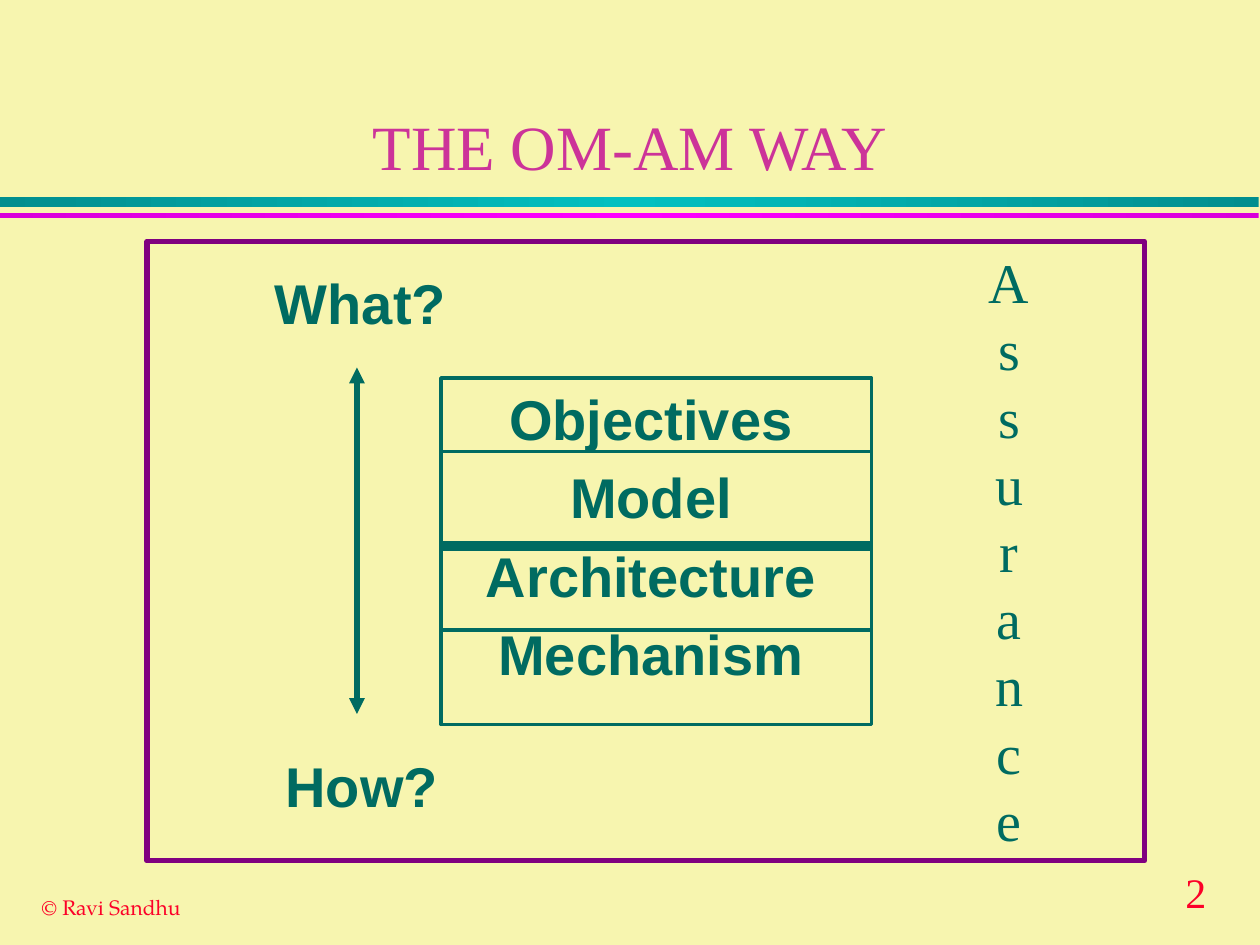
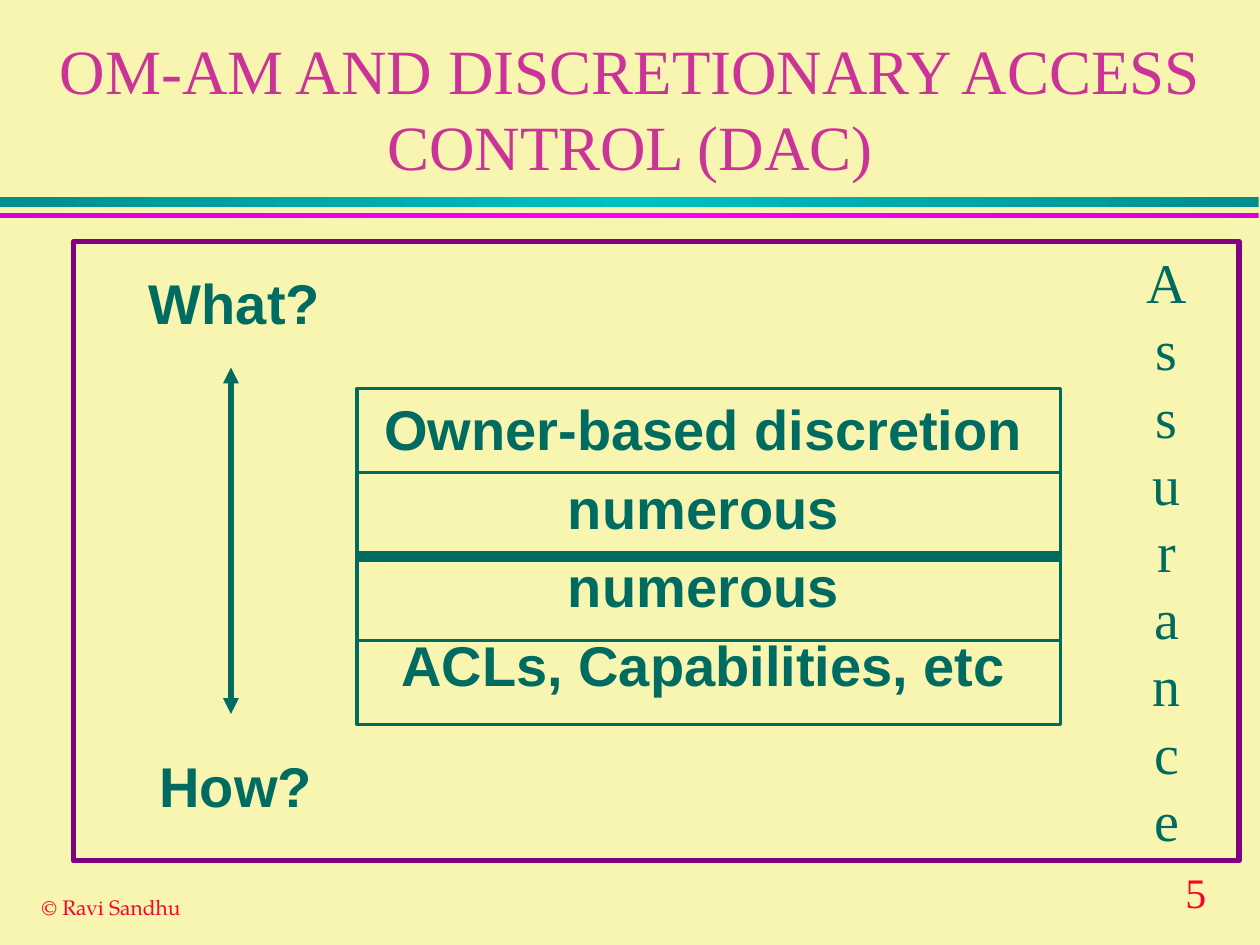
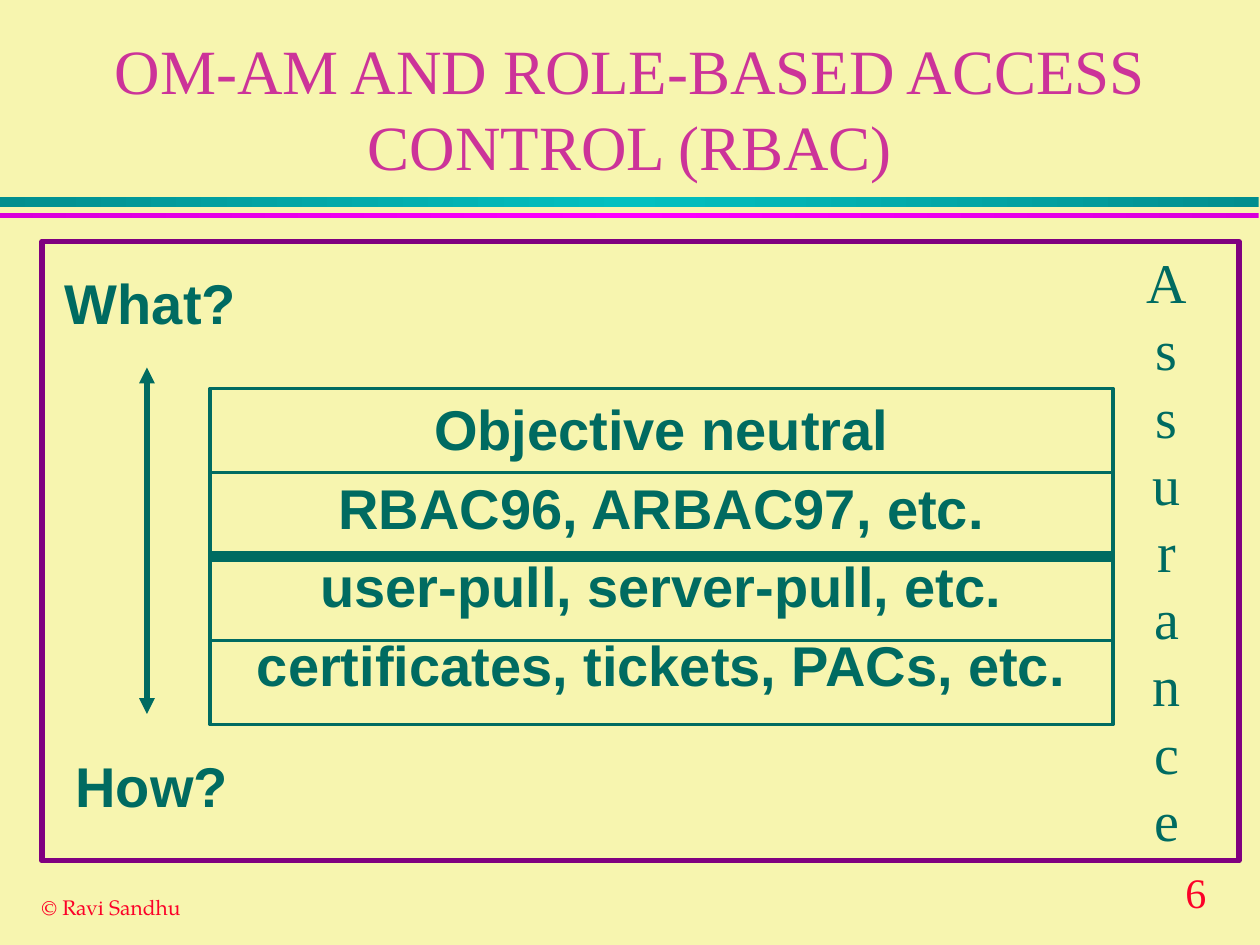
from copy import deepcopy
from dataclasses import dataclass

from pptx import Presentation
from pptx.dml.color import RGBColor
from pptx.enum.shapes import MSO_CONNECTOR as Connector, MSO_SHAPE as Shape
from pptx.enum.text import MSO_ANCHOR as Anchor, MSO_AUTO_SIZE as AutoSize, PP_ALIGN as Align
from pptx.oxml.ns import qn
from pptx.oxml.xmlchemy import OxmlElement
from pptx.util import Inches, Pt


@dataclass(frozen=True)
class Theme:
    paper: str = "F7F5AF"
    title: str = "CC3399"
    ink: str = "006B61"
    frame: str = "800080"
    footer: str = "FC0128"
    teal_band: tuple = ("008E8E", "00C0C0", "008E8E")
    magenta_band: tuple = ("DA00DA", "FF00FF", "DA00DA")
    serif: str = "Times New Roman"
    sans: str = "Arial"
    credit_font: str = "TeX Gyre Pagella"
    title_size: float = 36
    body_size: float = 32
    number_size: float = 24
    credit_size: float = 12
    layer_gap: float = 6.4
    thin: float = 2
    medium: float = 3
    thick: float = 6


THEME = Theme()


@dataclass(frozen=True)
class Diagram:
    """One slide; lengths are grid units, 12 to the inch."""
    number: int
    title: str
    layers: tuple
    frame: tuple        # left, width
    stack: tuple        # left, top, width, height
    dividers: tuple     # rows of the three lines
    layer_text: tuple   # left, width
    arrow_column: int
    assurance_column: int


DIAGRAMS = (
    Diagram(2, "THE OM-AM WAY",
            ("Objectives", "Model", "Architecture", "Mechanism"),
            (14, 95), (42, 36, 41, 33), (43, 52, 60), (42, 40), 34, 93),
    Diagram(5, "OM-AM AND DISCRETIONARY ACCESS CONTROL (DAC)",
            ("Owner-based discretion", "numerous", "numerous", "ACLs, Capabilities, etc"),
            (7, 111), (34, 37, 67, 32), (45, 53, 61), (35, 64), 22, 108),
    Diagram(6, "OM-AM AND ROLE-BASED ACCESS CONTROL (RBAC)",
            ("Objective neutral", "RBAC96, ARBAC97, etc.", "user-pull, server-pull, etc.",
             "certificates, tickets, PACs, etc."),
            (4, 114), (20, 37, 86, 32), (45, 53, 61), (21, 84), 14, 108),
)


def grid(*units):
    return [Inches(unit / 12) for unit in units]


def format_text(text_frame, font, size, color, bold=False, align=Align.LEFT, gap=0):
    for paragraph in text_frame.paragraphs:
        paragraph.alignment = align
        paragraph.space_before = Pt(gap)
        for run in paragraph.runs:
            run.font.name = font
            run.font.size = Pt(size)
            run.font.bold = bold
            run.font.color.rgb = RGBColor.from_string(color)


def add_text(slide, box, text, font, size, color, wrap=False, **style):
    shape = slide.shapes.add_textbox(*grid(*box))
    text_frame = shape.text_frame
    text_frame.text = text
    text_frame.word_wrap = wrap
    text_frame.auto_size = AutoSize.NONE if wrap else AutoSize.SHAPE_TO_FIT_TEXT
    format_text(text_frame, font, size, color, **style)
    return shape


def add_label(slide, box, text, **style):
    return add_text(slide, box, text, THEME.sans, THEME.body_size, THEME.ink, bold=True, **style)


def add_outline(slide, box, color, weight):
    shape = slide.shapes.add_shape(Shape.RECTANGLE, *grid(*box))
    shape.shadow.inherit = False
    shape.fill.background()
    shape.line.color.rgb = RGBColor.from_string(color)
    shape.line.width = Pt(weight)
    return shape


def add_line(slide, start, end, weight, arrows=False):
    line = slide.shapes.add_connector(Connector.STRAIGHT, *grid(*start, *end))
    line.line.color.rgb = RGBColor.from_string(THEME.ink)
    line.line.width = Pt(weight)
    if arrows:
        for tag in ("a:headEnd", "a:tailEnd"):
            arrowhead = OxmlElement(tag)
            arrowhead.set("type", "triangle")
            line.line._get_or_add_ln().append(arrowhead)
    line.element.spPr.append(OxmlElement("a:effectLst"))
    return line


def add_band(slide, top, height, colors):
    band = slide.shapes.add_shape(Shape.RECTANGLE, 0, Inches(top), Inches(9.99), Inches(height))
    band.shadow.inherit = False
    band.line.fill.background()
    band.fill.gradient()
    band.fill.gradient_angle = 0
    stop_list = next(band.element.iter(qn("a:gsLst")))
    stop_list.append(deepcopy(stop_list[0]))
    for index, (stop, color) in enumerate(zip(band.fill.gradient_stops, colors)):
        stop.position = index / 2
        stop.color.rgb = RGBColor.from_string(color)
    return band


def furnish_layout(layout, slide):
    """Build the bands and the credit on a slide, then move them to its layout."""
    shared = (
        add_band(slide, 1.56, 0.08, THEME.teal_band),
        add_band(slide, 1.69, 0.04, THEME.magenta_band),
        add_text(slide, (2.76, 84.6, 15.72, 3.6), "© Ravi Sandhu",
                 THEME.credit_font, THEME.credit_size, THEME.footer),
    )
    for shape_id, shape in enumerate(shared, start=101):
        shape.element.xpath(".//p:cNvPr")[0].set("id", str(shape_id))
        layout.shapes.element.append(shape.element)


def set_title(slide, text):
    title = slide.shapes.title
    title.left, title.top, title.width, title.height = grid(4, 3, 112, 15)
    text_frame = title.text_frame
    text_frame.text = text
    text_frame.word_wrap = True
    text_frame.auto_size = AutoSize.NONE
    text_frame.vertical_anchor = Anchor.BOTTOM
    format_text(text_frame, THEME.serif, THEME.title_size, THEME.title, align=Align.CENTER)


def add_scale(slide, column):
    """The arrow that runs from What? to How?."""
    add_line(slide, (column, 35), (column, 68), THEME.medium, arrows=True)
    add_label(slide, (column - 9, 25, 18.72, 7.5), "What?")
    add_label(slide, (column - 8, 71, 16.92, 7.5), "How?", align=Align.CENTER)


def add_stack(slide, diagram):
    left, top, width, height = diagram.stack
    text_left, text_width = diagram.layer_text
    add_label(slide, (text_left, top, text_width, height), "\n".join(diagram.layers),
              wrap=True, align=Align.CENTER, gap=THEME.layer_gap)
    stack = add_outline(slide, diagram.stack, THEME.ink, THEME.thin)
    for row, weight in zip(diagram.dividers, (THEME.thin, THEME.thick, THEME.thin)):
        divider = add_line(slide, (left, row), (left + width, row), weight)
        if 2 * row == 2 * top + height:
            divider.begin_connect(stack, 1)
            divider.end_connect(stack, 3)


def add_assurance(slide, diagram):
    left, width = diagram.frame
    add_outline(slide, (left, 23, width, 59), THEME.frame, THEME.medium)
    add_text(slide, (diagram.assurance_column, 23, 6.24, 58.8), "\n".join("Assurance"),
             THEME.serif, THEME.body_size, THEME.ink, align=Align.CENTER)


def main():
    presentation = Presentation()
    presentation.slide_width, presentation.slide_height = grid(120, 90)
    background = presentation.slide_master.background.fill
    background.solid()
    background.fore_color.rgb = RGBColor.from_string(THEME.paper)
    layout = presentation.slide_layouts.get_by_name("Title Only")

    for diagram in DIAGRAMS:
        slide = presentation.slides.add_slide(layout)
        if diagram is DIAGRAMS[0]:
            furnish_layout(layout, slide)
        set_title(slide, diagram.title)
        add_text(slide, (111.72, 81.96, 7.08, 6), str(diagram.number),
                 THEME.serif, THEME.number_size, THEME.footer)
        add_scale(slide, diagram.arrow_column)
        add_stack(slide, diagram)
        add_assurance(slide, diagram)

    presentation.save("out.pptx")


if __name__ == "__main__":
    main()
